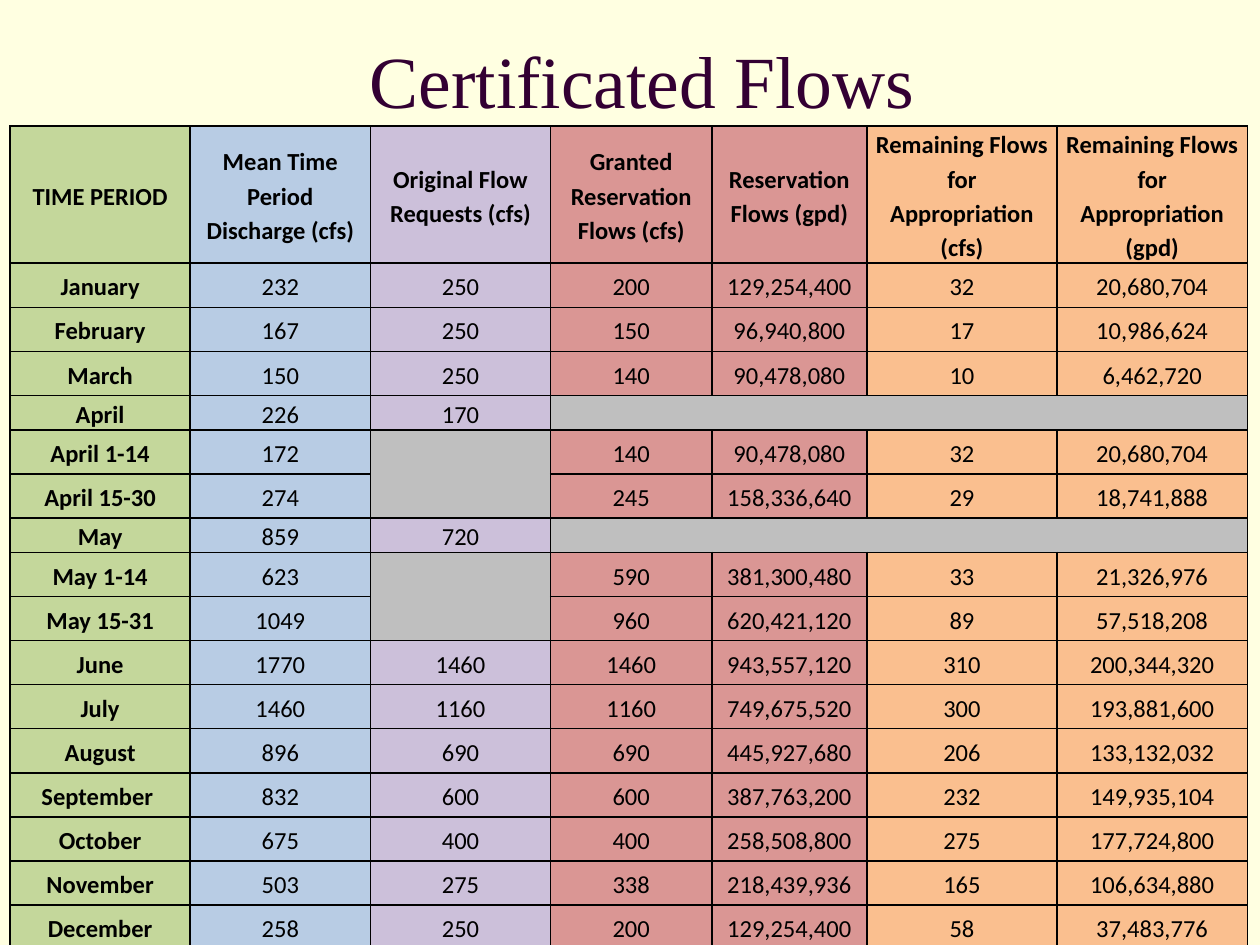
from lxml import etree
from pptx import Presentation
from pptx import util as u
from pptx.dml.color import RGBColor
from pptx.enum import text
from pptx.oxml.ns import qn

CREAM = RGBColor(0xFF, 0xFF, 0xE1)
PLUM = RGBColor(0x33, 0x00, 0x33)
BLACK = RGBColor(0, 0, 0)
GREY = RGBColor(0xBF, 0xBF, 0xBF)
GREEN = RGBColor(0xC4, 0xD7, 0x9B)
BLUE = RGBColor(0xB8, 0xCC, 0xE4)
LILAC = RGBColor(0xCC, 0xC0, 0xDA)
RED = RGBColor(0xDA, 0x96, 0x94)
ORANGE = RGBColor(0xFA, 0xBF, 0x8F)

TITLE = "Certificated Flows "
COLUMNS = [
    ("TIME PERIOD", 1.43, GREEN),
    ("Mean Time Period Discharge (cfs)", 1.43, BLUE),
    ("Original Flow Requests (cfs)", 1.43, LILAC),
    ("Granted Reservation Flows (cfs)", 1.28, RED),
    ("Reservation Flows (gpd)", 1.23, RED),
    ("Remaining Flows for Appropriation (cfs)", 1.51, ORANGE),
    ("Remaining Flows for Appropriation (gpd)", 1.51, ORANGE),
]
FLOWS = [
    ("January", "232", "250", "200", "129,254,400", "32", "20,680,704"),
    ("February", "167", "250", "150", "96,940,800", "17", "10,986,624"),
    ("March", "150", "250", "140", "90,478,080", "10", "6,462,720"),
    ("April", "226", "170", None, None, None, None),
    ("April 1-14", "172", None, "140", "90,478,080", "32", "20,680,704"),
    ("April 15-30", "274", None, "245", "158,336,640", "29", "18,741,888"),
    ("May", "859", "720", None, None, None, None),
    ("May 1-14", "623", None, "590", "381,300,480", "33", "21,326,976"),
    ("May 15-31", "1049", None, "960", "620,421,120", "89", "57,518,208"),
    ("June", "1770", "1460", "1460", "943,557,120", "310", "200,344,320"),
    ("July", "1460", "1160", "1160", "749,675,520", "300", "193,881,600"),
    ("August", "896", "690", "690", "445,927,680", "206", "133,132,032"),
    ("September ", "832", "600", "600", "387,763,200", "232", "149,935,104"),
    ("October", "675", "400", "400", "258,508,800", "275", "177,724,800"),
    ("November", "503", "275", "338", "218,439,936", "165", "106,634,880"),
    ("December", "258", "250", "200", "129,254,400", "58", "37,483,776"),
]
HEADER_H, ROW_H, SPLIT_H = 1.02, 0.35, 0.25
SPLIT_ROWS = (4, 7)


def add_borders(cell):
    tc_pr = cell._tc.get_or_add_tcPr()
    for i, side in enumerate(("lnL", "lnR", "lnT", "lnB")):
        ln = etree.Element(qn("a:" + side), w=str(u.Pt(1)))
        fill = etree.SubElement(ln, qn("a:solidFill"))
        etree.SubElement(fill, qn("a:srgbClr"), val=str(BLACK))
        tc_pr.insert(i, ln)


def format_cell(cell, value, color, bold):
    cell.fill.solid()
    cell.fill.fore_color.rgb = color if value else GREY
    cell.vertical_anchor = text.MSO_ANCHOR.MIDDLE
    cell.margin_left = cell.margin_right = u.Inches(0.07)
    cell.margin_top = cell.margin_bottom = 0
    add_borders(cell)
    p = cell.text_frame.paragraphs[0]
    if not value:
        etree.SubElement(p._p, qn("a:endParaRPr"), sz="1400")
        return
    p.text = value
    p.alignment = text.PP_ALIGN.CENTER
    p.line_spacing = 1.15
    p.font.name, p.font.size, p.font.bold = "Calibri", u.Pt(14), bold
    p.font.color.rgb = BLACK


def add_title(slide):
    title = slide.shapes.title
    title.left, title.top = u.Inches(0.92), 0
    title.width, title.height = u.Inches(8.5), u.Inches(1.25)
    tf = title.text_frame
    tf.vertical_anchor = text.MSO_ANCHOR.MIDDLE
    p = tf.paragraphs[0]
    p.text = TITLE
    p.alignment = text.PP_ALIGN.CENTER
    p.font.name, p.font.size = "Times New Roman", u.Pt(42)
    p.font.color.rgb = PLUM


def add_flow_table(slide):
    rows = [[name for name, _, _ in COLUMNS]] + FLOWS
    heights = [HEADER_H] + [SPLIT_H if r in SPLIT_ROWS else ROW_H
                            for r in range(1, len(rows))]
    widths = [width for _, width, _ in COLUMNS]
    table = slide.shapes.add_table(
        len(rows), len(COLUMNS), u.Inches(0.08), u.Inches(1),
        u.Inches(sum(widths)), u.Inches(sum(heights))).table
    for column, width in zip(table.columns, widths):
        column.width = u.Inches(width)
    for row, height in zip(table.rows, heights):
        row.height = u.Inches(height)
    for r, values in enumerate(rows):
        for c, value in enumerate(values):
            format_cell(table.cell(r, c), value, COLUMNS[c][2], r == 0 or c == 0)
    for r in SPLIT_ROWS:
        table.cell(r, 3).merge(table.cell(r, 6))
        table.cell(r + 1, 2).merge(table.cell(r + 2, 2))


def main():
    """Build the certificated flows slide."""
    prs = Presentation()
    prs.slide_width, prs.slide_height = u.Inches(10), u.Inches(7.5)
    slide = prs.slides.add_slide(prs.slide_layouts[5])
    slide.background.fill.solid()
    slide.background.fill.fore_color.rgb = CREAM
    add_title(slide)
    add_flow_table(slide)
    prs.save("out.pptx")


if __name__ == "__main__":
    main()
